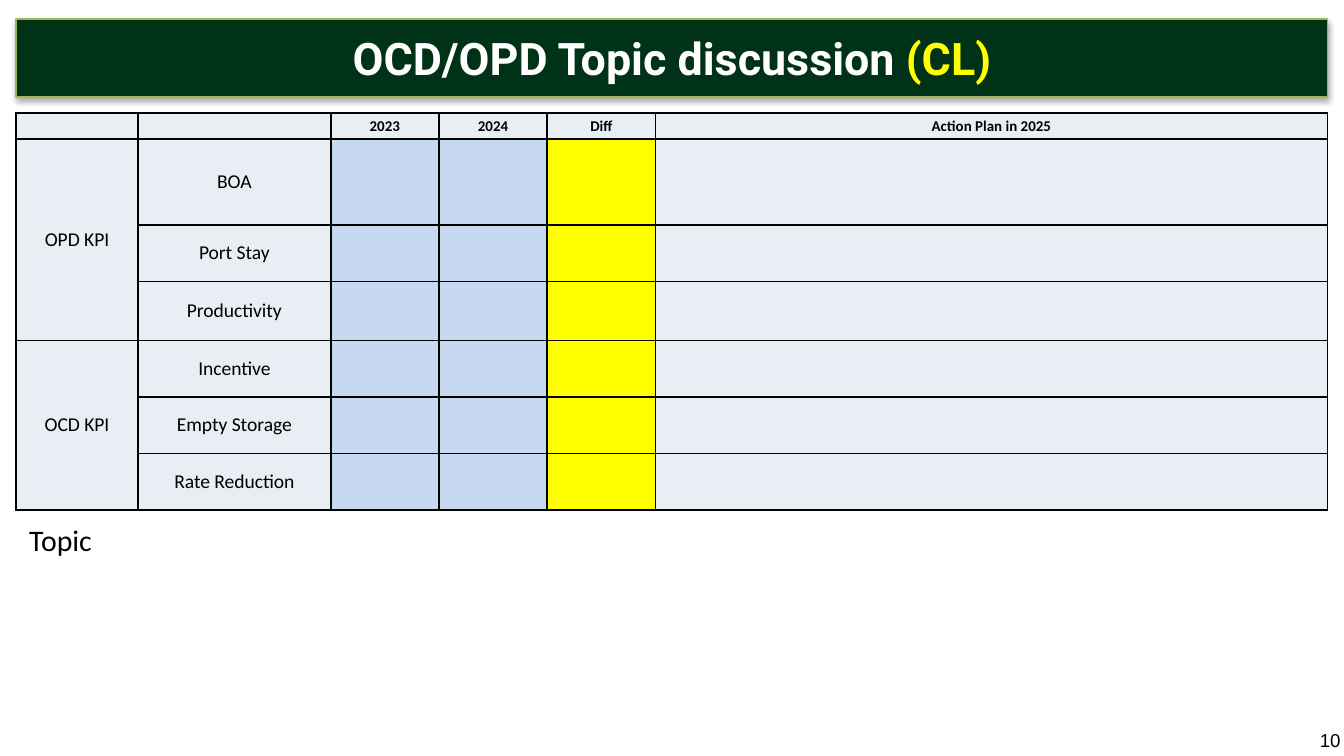
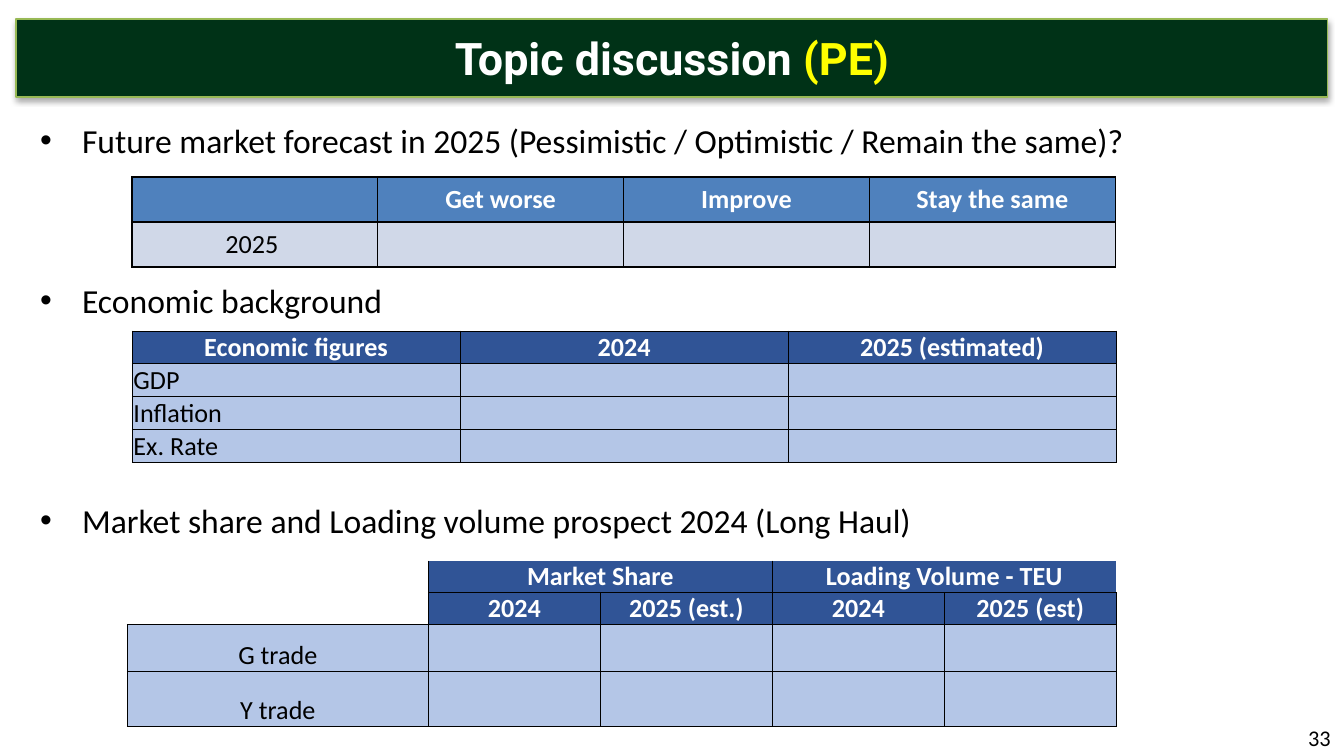
import pptx
import pptx.util
import pptx.dml.color
import pptx.enum.text
import pptx.oxml.ns
from lxml import etree

Pt = pptx.util.Pt
ALIGN = pptx.enum.text.PP_ALIGN
ANCHOR = pptx.enum.text.MSO_ANCHOR
qn = pptx.oxml.ns.qn

COLORS = {
    "band": "003217", "band_edge": "98B955", "accent": "FFFF00",
    "white": "FFFFFF", "black": "000000",
    "kpi": "E9EDF4", "year": "C6D9F1",
    "outlook_head": "4F81BD", "outlook_body": "D0D8E8",
    "figures_head": "305496", "figures_body": "B4C6E7",
}
NO_STYLE = "{2D5ABB26-0587-4C30-8999-92F81FD0307C}"
TITLE_BOX = (8.6, 10.1, 702.7, 41.8)

TITLES = [("OCD/OPD Topic discussion ", "(CL)"), ("Topic discussion ", "(PE)")]

# Bullet text and the space above it
TOPICS = [
    ("Future market forecast in 2025 (Pessimistic / Optimistic / Remain the same)?", 0),
    ("Economic background", 64.3),
    ("Market share and Loading volume prospect 2024 (Long Haul)", 96.4),
]

TIGHT = (0.7, 0, 0.7, 0)
KPI_TABLE = dict(
    at=(8.6, 60.5), widths=[65.4, 103.2, 58, 58, 58, 360],
    heights=[13.9, 46.1, 30.4, 31.6, 30.2, 30.3, 30.2],
    rows=[
        ["", "", "2023", "2024", "Diff", "Action Plan in 2025"],
        ["OPD KPI", "BOA"],
        ["", "Port Stay"],
        ["", "Productivity"],
        ["OCD KPI", "Incentive"],
        ["", "Empty Storage"],
        ["", "Rate Reduction"],
    ],
    head="kpi", head_text="black", body="kpi",
    column_fills={2: "year", 3: "year", 4: "accent"},
    merges=[((1, 0), (3, 0)), ((4, 0), (6, 0))],
    head_size=8, size=10.5, line=1, anchor=ANCHOR.MIDDLE, margins=TIGHT,
)
OUTLOOK_TABLE = dict(
    at=(70.6, 94.9), widths=[131.75] * 4, heights=[24, 23.7],
    rows=[["", "Get worse", "Improve", "Stay the same"], ["2025 "]],
    head="outlook_head", body="outlook_body", line=1,
    anchor=ANCHOR.TOP, margins=(7.2, 3.6, 7.2, 3.6),
)
FIGURES_TABLE = dict(
    at=(70.8, 177.3), widths=[175.7] * 3, heights=[17.6] * 4,
    rows=[["Economic figures", "2024", "2025 (estimated)"],
          ["GDP"], ["Inflation"], ["Ex. Rate"]],
    head="figures_head", body="figures_body", body_align=ALIGN.LEFT,
)
SHARE_TABLE = dict(
    at=(68.2, 300.4), widths=[161.4] + [92.1] * 4,
    heights=[17.2, 17.2, 25.2, 29.5],
    rows=[
        ["", "Market Share", "", "Loading Volume - TEU", ""],
        ["", "2024", "2025 (est.)", "2024", "2025 (est)"],
        ["G trade"],
        ["Y trade"],
    ],
    head="figures_head", body="figures_body", head_rows=2,
    merges=[((0, 1), (0, 2)), ((0, 3), (0, 4))],
    edges={(0, 0): "R", (0, 1): "LRB", (0, 2): "RB", (0, 3): "LB",
           (0, 4): "B", (1, 0): "RB"},
    unfilled={(0, 0), (1, 0)},
)


def rgb(name):
    return pptx.dml.color.RGBColor.from_string(COLORS[name])


def style_font(font, face, size, color, bold=False):
    font.name, font.size, font.bold = face, Pt(size), bold
    font.color.rgb = rgb(color)


def set_margins(target, margins):
    (target.margin_left, target.margin_top,
     target.margin_right, target.margin_bottom) = map(Pt, margins)


def add_title(slide, words):
    title = slide.shapes.title
    title.left, title.top, title.width, title.height = map(Pt, TITLE_BOX)
    title.fill.solid()
    title.fill.fore_color.rgb = rgb("band")
    title.line.color.rgb = rgb("band_edge")
    title.line.width = Pt(0.75)

    effects = etree.SubElement(title._element.spPr, qn("a:effectLst"))
    shadow = etree.SubElement(
        effects, qn("a:outerShdw"), blurRad=str(Pt(3.1)), dist=str(Pt(1.8)),
        dir="5400000", rotWithShape="0")
    shade = etree.SubElement(shadow, qn("a:srgbClr"), val=COLORS["black"])
    etree.SubElement(shade, qn("a:alpha"), val="35000")

    frame = title.text_frame
    frame.auto_size = pptx.enum.text.MSO_AUTO_SIZE.NONE
    frame.vertical_anchor = ANCHOR.MIDDLE
    set_margins(frame, (0, 0, 0, 0))
    heading = frame.paragraphs[0]
    heading.alignment = ALIGN.CENTER
    for text, color in zip(words, ("white", "accent")):
        run = heading.add_run()
        run.text = text
        style_font(run.font, "Roboto", 24, color, True)


def add_text(slide, box, text, size, face="Calibri", align=ALIGN.LEFT):
    frame = slide.shapes.add_textbox(*map(Pt, box)).text_frame
    frame.word_wrap = True
    line = frame.paragraphs[0]
    line.text, line.alignment = text, align
    style_font(line.font, face, size, "black")
    return frame


def add_topics(slide, box):
    frame = slide.shapes.add_textbox(*map(Pt, box)).text_frame
    frame.word_wrap = True
    for number, (text, gap) in enumerate(TOPICS):
        topic = frame.add_paragraph() if number else frame.paragraphs[0]
        topic.text = text
        topic.space_before = Pt(gap)
        props = topic._p.get_or_add_pPr()
        props.set("marL", str(Pt(22.5)))
        props.set("indent", str(-Pt(22.5)))
        etree.SubElement(props, qn("a:buFont"), typeface="Arial")
        etree.SubElement(props, qn("a:buChar"), char="•")
        style_font(topic.font, "Calibri", 18, "black")


def draw_edges(cell, edges, width):
    props = cell._tc.get_or_add_tcPr()
    for edge in edges:
        line = etree.SubElement(props, qn("a:ln" + edge), w=str(Pt(width)))
        fill = etree.SubElement(line, qn("a:solidFill"))
        etree.SubElement(fill, qn("a:srgbClr"), val=COLORS["black"])


def add_table(slide, at, widths, heights, rows, head, body, head_text="white",
              head_rows=1, head_size=14, size=14, line=0.5, anchor=ANCHOR.BOTTOM,
              margins=TIGHT, body_align=ALIGN.CENTER, column_fills={},
              merges=(), edges={}, unfilled=()):
    """Draw a grid; short rows are filled up with empty cells."""
    table = slide.shapes.add_table(
        len(heights), len(widths),
        *map(Pt, (*at, sum(widths), sum(heights)))).table
    table.first_row = table.horz_banding = False
    table._tbl.tblPr.find(qn("a:tableStyleId")).text = NO_STYLE
    for column, width in zip(table.columns, widths):
        column.width = Pt(width)

    for r, height in enumerate(heights):
        table.rows[r].height = Pt(height)
        is_head = r < head_rows
        font_size = head_size if is_head else size
        for c in range(len(widths)):
            cell = table.cell(r, c)
            draw_edges(cell, edges.get((r, c), "LRTB"), line)
            if (r, c) in unfilled:
                cell.fill.background()
            else:
                cell.fill.solid()
                cell.fill.fore_color.rgb = rgb(
                    head if is_head else column_fills.get(c, body))
            cell.vertical_anchor = anchor
            set_margins(cell, margins)
            label = cell.text_frame.paragraphs[0]
            label.alignment = ALIGN.CENTER if is_head else body_align
            style_font(label.font, "Calibri", font_size,
                       head_text if is_head else "black", is_head)
            text = rows[r][c] if c < len(rows[r]) else ""
            if text:
                label.text = text
            else:
                etree.SubElement(label._p, qn("a:endParaRPr"),
                                 sz=str(int(font_size * 100)))
    for first, last in merges:
        table.cell(*first).merge(table.cell(*last))


def main():
    deck = pptx.Presentation()
    deck.slide_width, deck.slide_height = Pt(720), Pt(405)
    kpi, market = [deck.slides.add_slide(deck.slide_layouts[5]) for _ in TITLES]
    for slide, words in zip((kpi, market), TITLES):
        add_title(slide, words)

    add_table(kpi, **KPI_TABLE)
    add_text(kpi, (8.6, 275.8, 692, 26.6), "Topic", 16)
    page = add_text(kpi, (700, 388, 20, 16.6), "10", 10, "Arial")
    page.vertical_anchor = ANCHOR.MIDDLE
    page.margin_right = 0

    add_text(market, (552.2, 384.5, 167.8, 20.5), "33", 12, align=ALIGN.RIGHT)
    add_topics(market, (14.4, 60.5, 692, 319.7))
    for spec in (OUTLOOK_TABLE, FIGURES_TABLE, SHARE_TABLE):
        add_table(market, **spec)
    deck.save("out.pptx")


if __name__ == "__main__":
    main()
